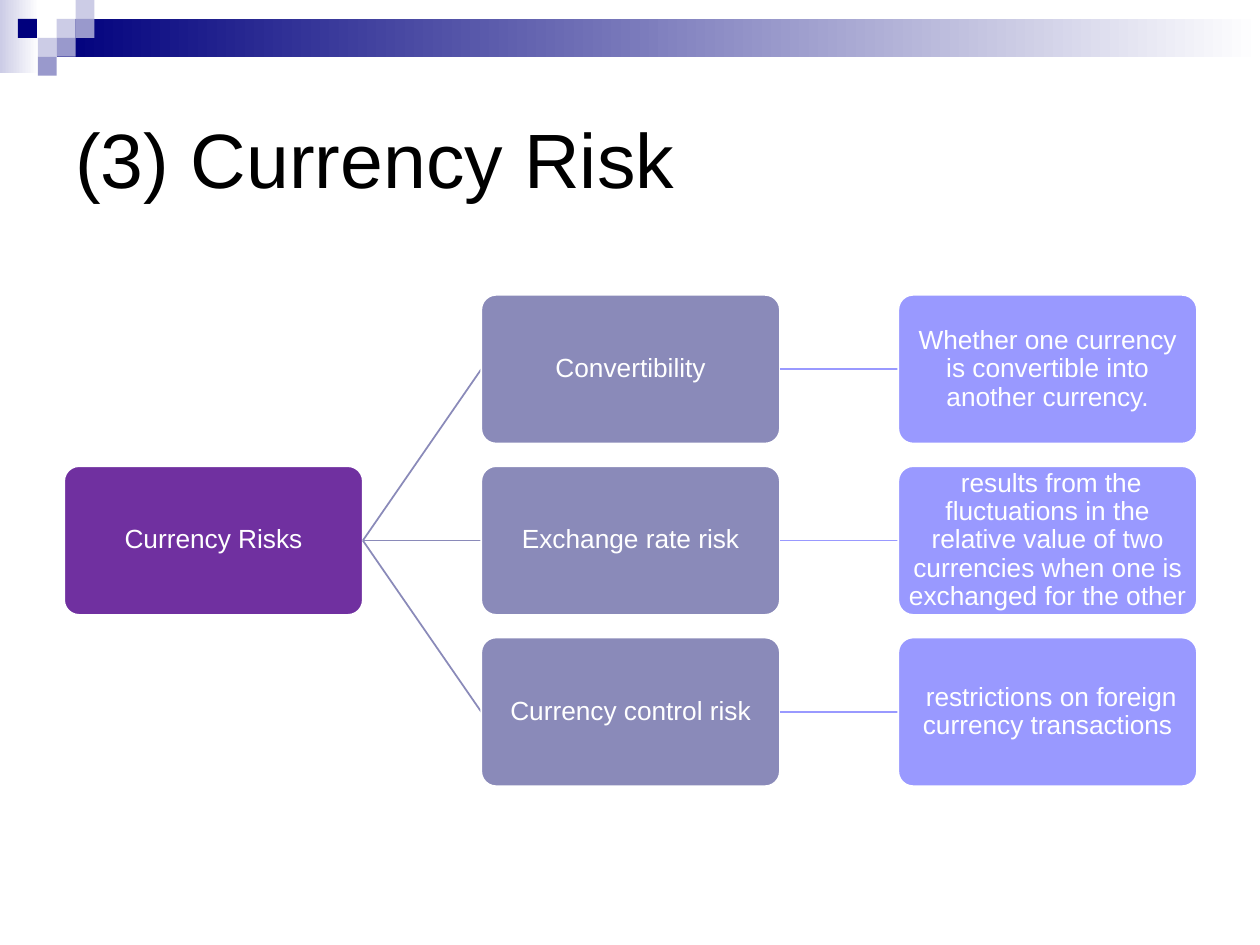
from lxml import etree
from pptx import Presentation
from pptx import util as u
from pptx.dml.color import RGBColor
from pptx.enum import shapes, text
from pptx.oxml.ns import qn

COLORS = {
    "navy": "00007D", "pale": "CCCCE6", "lavender": "9999CC",
    "white": "FFFFFF", "black": "000000",
    "root": "7030A0", "risk": "8A8AB9", "detail": "9999FF",
}
TILE = 0.15
TILES = [  # column, row, colour
    (3, 1, "pale"), (4, 0, "pale"), (4, 1, "lavender"), (2, 2, "pale"),
    (0.95, 1, "navy"), (3, 2, "lavender"), (2, 3, "lavender"),
]
LEFT, TOP = 0.51, 2.34
BOX_WIDTH, BOX_HEIGHT = 2.37, 1.18
COLUMN_STEP, ROW_STEP = 3.31, 1.36
RISKS = [
    ("Convertibility",
     "Whether one currency is convertible into another currency."),
    ("Exchange rate risk",
     " results from the fluctuations in the relative value of two "
     "currencies when one is exchanged for the other"),
    ("Currency control risk",
     " restrictions on foreign currency transactions"),
]


def color(name):
    return RGBColor.from_string(COLORS[name])


class RiskSlide:
    font = "Arial"

    def __init__(self, deck):
        self.slide = deck.slides.add_slide(deck.slide_layouts[6])
        self.shapes = self.slide.shapes

    def label(self, shape, words, size, ink, inset_x, inset_y):
        frame = shape.text_frame
        frame.word_wrap = True
        frame.vertical_anchor = text.MSO_ANCHOR.MIDDLE
        frame.margin_left = frame.margin_right = u.Inches(inset_x)
        frame.margin_top = frame.margin_bottom = u.Inches(inset_y)
        frame.text = words
        para = frame.paragraphs[0]
        font = para.runs[0].font
        font.name, font.size = self.font, u.Pt(size)
        font.color.rgb = color(ink)
        return para

    def title(self, words, *place):
        box = self.shapes.add_textbox(*map(u.Inches, place))
        self.label(box, words, 44, "black", 0.1, 0.05)

    def block(self, kind, place):
        shape = self.shapes.add_shape(kind, *map(u.Inches, place))
        shape.shadow.inherit = False
        shape.line.fill.background()
        return shape

    def fade(self, start, *place):
        """Draw a bar that fades to white from left to right."""
        fill = self.block(shapes.MSO_SHAPE.RECTANGLE, place).fill
        fill.gradient()
        fill.gradient_angle = 0
        for stop, name in zip(fill.gradient_stops, (start, "white")):
            stop.color.rgb = color(name)

    def tile(self, column, row, name):
        place = (column * TILE, row * TILE, TILE, TILE)
        fill = self.block(shapes.MSO_SHAPE.RECTANGLE, place).fill
        fill.solid()
        fill.fore_color.rgb = color(name)

    def node(self, words, column, row, name, parent=None):
        """Add a box on the tree grid, with its link lying beneath it."""
        link = self.link(parent, name) if parent is not None else None
        place = (LEFT + column * COLUMN_STEP, TOP + row * ROW_STEP,
                 BOX_WIDTH, BOX_HEIGHT)
        box = self.block(shapes.MSO_SHAPE.ROUNDED_RECTANGLE, place)
        box.adjustments[0] = 0.1
        box.fill.solid()
        box.fill.fore_color.rgb = color(name)
        box.line.color.rgb = color("white")
        box.line.width = u.Pt(1)
        para = self.label(box, words, 15, "white", 0.04, 0.04)
        para.alignment = text.PP_ALIGN.CENTER
        para.line_spacing = 0.9
        if link is not None:
            link.end_connect(box, 1)
        return box

    def link(self, parent, name):
        line = self.shapes.add_connector(
            shapes.MSO_CONNECTOR.STRAIGHT, 0, 0, 0, 0)
        line.begin_connect(parent, 3)
        line.line.color.rgb = color(name)
        line.line.width = u.Pt(1)
        etree.SubElement(line._element.spPr, qn("a:effectLst"))
        return line


def main():
    deck = Presentation()
    deck.slide_width, deck.slide_height = u.Inches(10), u.Inches(7.5)
    page = RiskSlide(deck)

    page.fade("pale", 0, 0, 0.31, 0.58)
    page.fade("navy", 3 * TILE, TILE, 9.55, 2 * TILE)
    for tile in TILES:
        page.tile(*tile)
    page.title("(3) Currency Risk", 0.5, 0.5, 9, 1.5)

    root = page.node("Currency Risks", 0, 1, "root")
    for row, (risk, detail) in enumerate(RISKS):
        branch = page.node(risk, 1, row, "risk", root)
        page.node(detail, 2, row, "detail", branch)

    deck.save("out.pptx")


if __name__ == "__main__":
    main()
